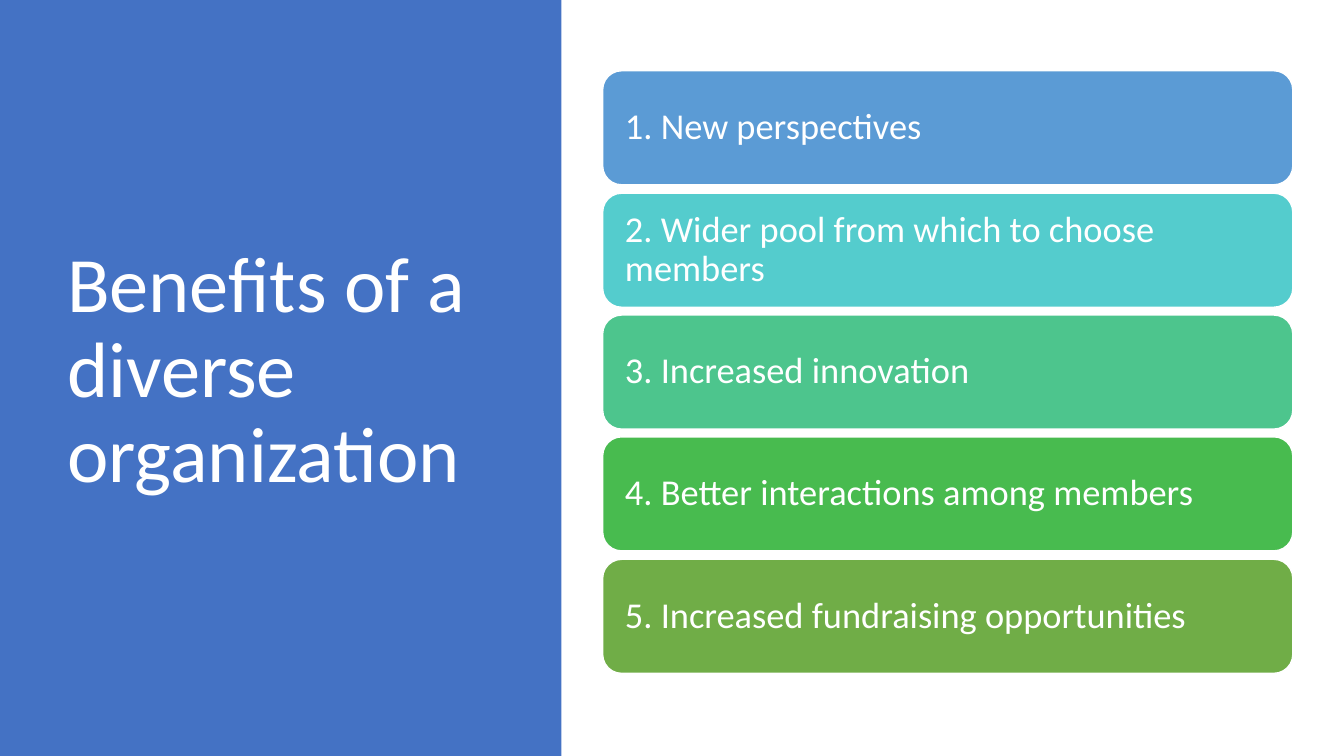
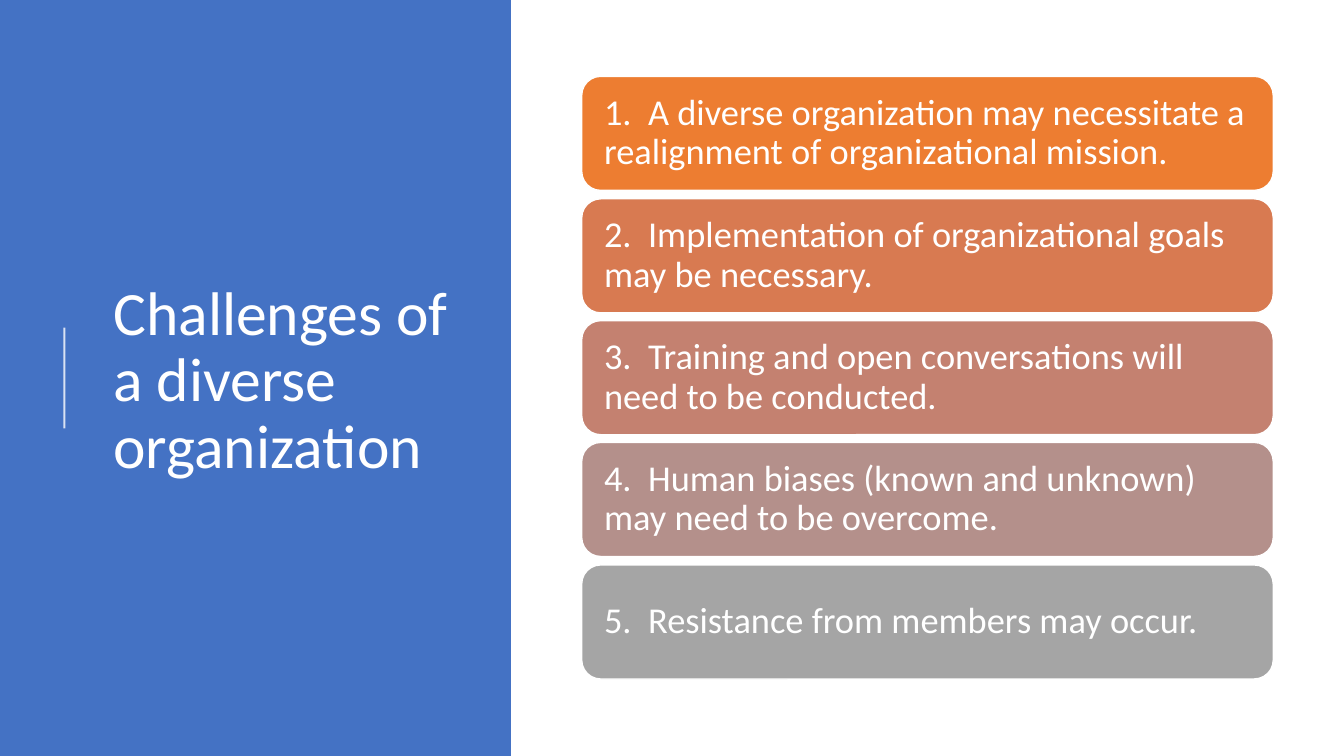
from dataclasses import dataclass
from typing import Optional

from lxml.etree import SubElement
from pptx import Presentation
from pptx.dml.color import RGBColor
from pptx.enum.shapes import MSO_CONNECTOR, MSO_SHAPE
from pptx.enum.text import MSO_ANCHOR, PP_ALIGN
from pptx.oxml.ns import qn
from pptx.util import Emu, Pt

EMU_PER_PX = 6350
SLIDE_W, SLIDE_H = 1920, 1080
CARD_H, STACK_H, CARD_INSET = 163, 861, 24


@dataclass(frozen=True)
class Theme:
    font: str = "Calibri"
    panel: str = "4472C4"
    light: str = "FFFFFF"
    card_size: int = 26
    line_spacing: float = 0.9
    card_border: float = 1
    rule_width: float = 1.5
    rule_opacity: int = 80


@dataclass(frozen=True)
class Box:
    x: int
    y: int
    w: int
    h: int


@dataclass(frozen=True)
class Rule:
    x: int
    top: int
    bottom: int


@dataclass(frozen=True)
class Card:
    text: str
    fill: str


@dataclass(frozen=True)
class ListSlide:
    title: str
    title_size: int
    title_box: Box
    panel_w: int
    stack_x: int
    stack_y: int
    card_w: int
    cards: tuple[Card, ...]
    rule: Optional[Rule] = None


THEME = Theme()

SLIDES = (
    ListSlide(
        "Benefits of a diverse organization", 56, Box(82, 98, 599, 867),
        panel_w=802, stack_x=861, stack_y=101, card_w=986,
        cards=(
            Card("1. New perspectives", "5B9BD5"),
            Card("2. Wider pool from which to choose members", "54CCCD"),
            Card("3. Increased innovation", "4DC58D"),
            Card("4. Better interactions among members", "48BB4F"),
            Card("5. Increased fundraising opportunities", "70AD47"),
        ),
    ),
    ListSlide(
        "Challenges of a diverse organization", 44, Box(148, 112, 531, 867),
        panel_w=730, stack_x=831, stack_y=109, card_w=988,
        cards=(
            Card("1.  A diverse organization may necessitate a realignment "
                 "of organizational mission.", "ED7D31"),
            Card("2.  Implementation of organizational goals may be necessary.", "D87A51"),
            Card("3.  Training and open conversations will need to be conducted.", "C48170"),
            Card("4.  Human biases (known and unknown) may need to be overcome.", "B4908B"),
            Card("5.  Resistance from members may occur.", "A5A5A5"),
        ),
        rule=Rule(92, 468, 612),
    ),
)


def px(n: float) -> Emu:
    return Emu(round(n * EMU_PER_PX))


def rgb(color: str) -> RGBColor:
    return RGBColor.from_string(color)


def place(box: Box) -> tuple[Emu, Emu, Emu, Emu]:
    return px(box.x), px(box.y), px(box.w), px(box.h)


def add_block(s, kind: MSO_SHAPE, box: Box, fill: str):
    sp = s.shapes.add_shape(kind, *place(box))
    sp.shadow.inherit = False
    sp.fill.solid()
    sp.fill.fore_color.rgb = rgb(fill)
    sp.line.fill.background()
    return sp


def write_text(tf, text: str, size: int) -> None:
    tf.word_wrap = True
    tf.vertical_anchor = MSO_ANCHOR.MIDDLE
    p = tf.paragraphs[0]
    p.text = text
    p.alignment = PP_ALIGN.LEFT
    p.line_spacing = THEME.line_spacing
    p.font.name = THEME.font
    p.font.size = Pt(size)
    p.font.color.rgb = rgb(THEME.light)


def add_card(s, card: Card, box: Box) -> None:
    sp = add_block(s, MSO_SHAPE.ROUNDED_RECTANGLE, box, card.fill)
    sp.line.color.rgb = rgb(THEME.light)
    sp.line.width = Pt(THEME.card_border)
    tf = sp.text_frame
    tf.margin_left = tf.margin_right = px(CARD_INSET)
    tf.margin_top = tf.margin_bottom = px(CARD_INSET)
    write_text(tf, card.text, THEME.card_size)


def add_cards(s, spec: ListSlide) -> None:
    pitch = (STACK_H - CARD_H) / (len(spec.cards) - 1)
    for i, card in enumerate(spec.cards):
        y = round(spec.stack_y + i * pitch)
        add_card(s, card, Box(spec.stack_x, y, spec.card_w, CARD_H))


def add_rule(s, rule: Rule) -> None:
    line = s.shapes.add_connector(
        MSO_CONNECTOR.STRAIGHT, px(rule.x), px(rule.bottom), px(rule.x), px(rule.top))
    line.line.color.rgb = rgb(THEME.light)
    line.line.width = Pt(THEME.rule_width)
    sp_pr = line._element.spPr
    color = sp_pr.find(".//" + qn("a:srgbClr"))
    SubElement(color, qn("a:alpha"), val=str(THEME.rule_opacity * 1000))
    SubElement(sp_pr, qn("a:effectLst"))


def add_list_slide(prs, spec: ListSlide) -> None:
    s = prs.slides.add_slide(prs.slide_layouts[6])
    add_block(s, MSO_SHAPE.RECTANGLE, Box(0, 0, spec.panel_w, SLIDE_H), THEME.panel)
    title = s.shapes.add_textbox(*place(spec.title_box))
    write_text(title.text_frame, spec.title, spec.title_size)
    if spec.rule:
        add_rule(s, spec.rule)
    add_cards(s, spec)


def main() -> None:
    prs = Presentation()
    prs.slide_width, prs.slide_height = px(SLIDE_W), px(SLIDE_H)
    for spec in SLIDES:
        add_list_slide(prs, spec)
    prs.save("out.pptx")


if __name__ == "__main__":
    main()
